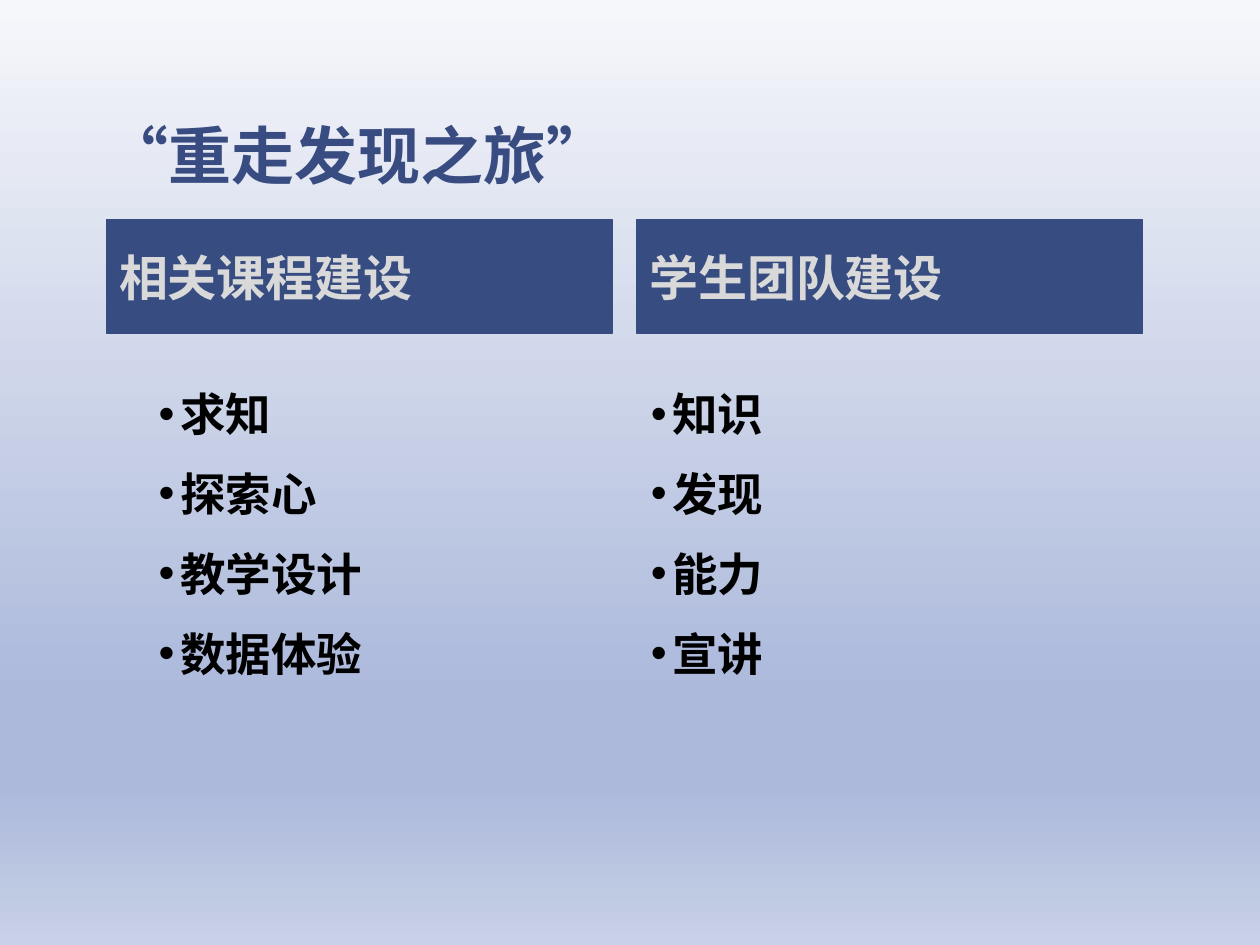
from lxml import etree
from pptx import Presentation
from pptx.dml.color import RGBColor
from pptx.enum.shapes import MSO_SHAPE
from pptx.enum.text import MSO_ANCHOR, PP_ALIGN
from pptx.oxml.ns import qn
from pptx.util import Cm, Pt

RECTANGLE = MSO_SHAPE.RECTANGLE
TOP, MIDDLE, BOTTOM = MSO_ANCHOR.TOP, MSO_ANCHOR.MIDDLE, MSO_ANCHOR.BOTTOM
LEFT = PP_ALIGN.LEFT
FONT = "Noto Sans CJK SC"
COLORS = {
    "title": "384C81",
    "bar": "374D81",
    "heading": "D9D9D9",
    "item": "000000",
    "sky": "F6F7FB",
    "mist": "ACB9DB",
    "ground": "C8D1E7",
}
BACKGROUND_STOPS = [(0, "sky"), (74, "mist"), (83, "mist"), (100, "ground")]
BULLET_INDENT = Cm(0.43)
COLUMNS = [
    (2.15, 2.95, "相关课程建设", ["求知", "探索心", "教学设计", "数据体验"]),
    (12.84, 12.87, "学生团队建设", ["知识", "发现", "能力", "宣讲"]),
]


def rgb(name):
    """Return the named palette colour."""
    return RGBColor.from_string(COLORS[name])


def paint_background(slide):
    """Fill the slide with the vertical gradient."""
    fill = slide.background.fill
    fill.gradient()
    fill.gradient_angle = 270
    stop_list = next(slide.element.iter(qn("a:gsLst")))
    for old_stop in list(stop_list):
        stop_list.remove(old_stop)
    for percent, name in BACKGROUND_STOPS:
        stop = etree.SubElement(stop_list, qn("a:gs"), pos=str(percent * 1000))
        etree.SubElement(stop, qn("a:srgbClr"), val=COLORS[name])


def add_bullet(paragraph):
    """Give the paragraph a round bullet with a hanging indent."""
    properties = paragraph._p.get_or_add_pPr()
    properties.set("marL", str(BULLET_INDENT))
    properties.set("indent", str(-BULLET_INDENT))
    etree.SubElement(properties, qn("a:buFont"), typeface="Arial")
    etree.SubElement(properties, qn("a:buChar"), char="•")


def write(frame, lines, size, color, anchor=TOP, bullets=False,
          line_spacing=1.0, space_before=0):
    """Write bold lines into a text frame, one paragraph each."""
    frame.word_wrap = True
    frame.vertical_anchor = anchor
    for index, line in enumerate(lines):
        paragraph = frame.paragraphs[0] if index == 0 else frame.add_paragraph()
        paragraph.alignment = LEFT
        paragraph.line_spacing = line_spacing
        paragraph.space_before = Pt(space_before)
        if bullets:
            add_bullet(paragraph)
        run = paragraph.add_run()
        run.text = line
        run.font.size = Pt(size)
        run.font.bold = True
        run.font.name = FONT
        run.font.color.rgb = rgb(color)
        properties = run._r.get_or_add_rPr()
        properties.set("lang", "zh-CN")
        etree.SubElement(properties, qn("a:ea"), typeface=FONT)


def add_text(slide, left, top, width, height, lines, **text_format):
    """Add a text box holding the given lines."""
    box = slide.shapes.add_textbox(Cm(left), Cm(top), Cm(width), Cm(height))
    write(box.text_frame, lines, **text_format)


def add_heading_bar(slide, left, heading):
    """Add the filled bar that heads a column."""
    bar = slide.shapes.add_shape(RECTANGLE, Cm(left), Cm(4.43), Cm(10.19), Cm(2.29))
    bar.shadow.inherit = False
    bar.fill.solid()
    bar.fill.fore_color.rgb = rgb("bar")
    bar.line.color.rgb = rgb("bar")
    bar.line.width = Pt(0.75)
    write(bar.text_frame, [heading], size=28, color="heading", anchor=MIDDLE)


def main():
    """Build and save the slide."""
    presentation = Presentation()
    presentation.slide_width, presentation.slide_height = Cm(25.4), Cm(19.05)
    slide = presentation.slides.add_slide(presentation.slide_layouts[6])
    paint_background(slide)
    add_text(slide, 1.88, 1.63, 21.95, 2.36, ["“重走发现之旅”"],
             size=36, color="title", anchor=BOTTOM)
    for bar_left, list_left, heading, items in COLUMNS:
        add_heading_bar(slide, bar_left, heading)
        add_text(slide, list_left, 7.44, 9.6, 10.19, items, size=26,
                 color="item", bullets=True, line_spacing=1.2, space_before=8.2)
    presentation.save("out.pptx")


if __name__ == "__main__":
    main()
